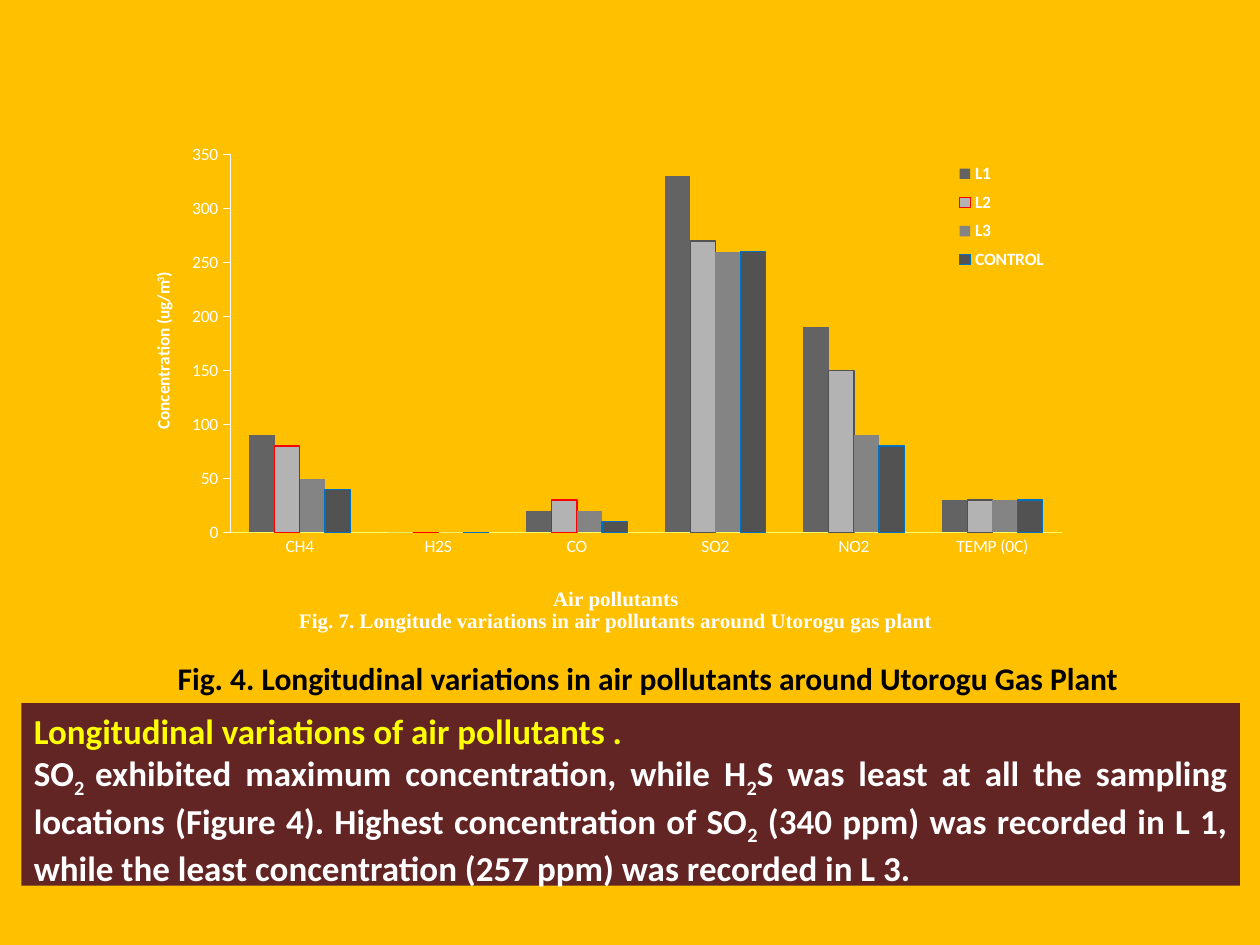
from lxml import etree
from pptx import Presentation
from pptx.chart.data import CategoryChartData
from pptx.dml.color import RGBColor
from pptx.enum.chart import XL_CHART_TYPE, XL_LEGEND_POSITION, XL_TICK_MARK
from pptx.enum.shapes import MSO_SHAPE
from pptx.enum.text import MSO_ANCHOR, PP_ALIGN
from pptx.oxml.ns import qn
from pptx.util import Inches, Pt

AMBER = RGBColor(0xFF, 0xC0, 0x00)
MAROON = RGBColor(0x63, 0x25, 0x23)
YELLOW = RGBColor(0xFF, 0xFF, 0x00)
PALE_YELLOW = RGBColor(0xFF, 0xFF, 0x66)
WHITE = RGBColor(0xFF, 0xFF, 0xFF)
BLACK = RGBColor(0x00, 0x00, 0x00)
RED = RGBColor(0xFF, 0x00, 0x00)
BLUE = RGBColor(0x00, 0x70, 0xC0)
GREY_1 = RGBColor(0x63, 0x63, 0x63)
GREY_2 = RGBColor(0xB3, 0xB3, 0xB3)
GREY_3 = RGBColor(0x84, 0x84, 0x84)
GREY_4 = RGBColor(0x52, 0x52, 0x52)

CLUSTERED = XL_CHART_TYPE.COLUMN_CLUSTERED
LEGEND_RIGHT = XL_LEGEND_POSITION.RIGHT
TICK_NONE, TICK_OUT = XL_TICK_MARK.NONE, XL_TICK_MARK.OUTSIDE
RECTANGLE = MSO_SHAPE.RECTANGLE
TOP = MSO_ANCHOR.TOP
LEFT, JUSTIFY = PP_ALIGN.LEFT, PP_ALIGN.JUSTIFY


def add_run(p, text, size, color, font="Calibri", baseline=0):
    """Add a bold run; baseline is the shift in percent."""
    r = p.add_run()
    r.text = text
    r.font.size = Pt(size)
    r.font.bold = True
    r.font.name = font
    r.font.color.rgb = color
    if baseline:
        r.font._element.set("baseline", str(baseline * 1000))


def set_layout(element, index, **values):
    """Place a chart part by fractions of the chart."""
    for old in element.findall(qn("c:layout")):
        element.remove(old)
    layout = etree.Element(qn("c:layout"))
    manual = etree.SubElement(layout, qn("c:manualLayout"))
    for name, value in values.items():
        etree.SubElement(manual, qn("c:" + name)).set("val", str(value))
    element.insert(index, layout)


prs = Presentation()
prs.slide_width, prs.slide_height = Inches(10), Inches(7.5)
s = prs.slides.add_slide(prs.slide_layouts[6])
s.background.fill.solid()
s.background.fill.fore_color.rgb = AMBER

# Findings panel
sp = s.shapes.add_shape(RECTANGLE, Inches(0.17), Inches(5.58), Inches(9.67), Inches(1.45))
sp.shadow.inherit = False
sp.fill.solid()
sp.fill.fore_color.rgb = MAROON
sp.line.fill.background()
tf = sp.text_frame
tf.word_wrap = True
tf.vertical_anchor = TOP
p = tf.paragraphs[0]
p.alignment = LEFT
add_run(p, "Longitudinal variations of air pollutants .", 20, YELLOW)
p = tf.add_paragraph()
p.alignment = JUSTIFY
for text, baseline in [
    ("SO", 0), ("2 ", -25),
    ("exhibited maximum concentration, while H", 0), ("2", -25),
    ("S was least at all the sampling locations (Figure 4). Highest concentration of SO", 0),
    ("2", -25),
    (" (340 ppm) was recorded in L 1, while the least concentration (257 ppm) was recorded in L 3.", 0),
]:
    add_run(p, text, 20, WHITE, baseline=baseline)

# Figure caption
caption = s.shapes.add_textbox(Inches(0.58), Inches(5.18), Inches(8.79), Inches(0.4))
tf = caption.text_frame
tf.word_wrap = True
tf.margin_left = Inches(0.83)
add_run(tf.paragraphs[0],
        "Fig. 4. Longitudinal variations in air pollutants around Utorogu Gas Plant", 18, BLACK)

# Pollutant chart
series_specs = [
    ("L1", (90, 0, 20, 330, 190, 30), GREY_1, None),
    ("L2", (80, 0, 30, 270, 150, 30), GREY_2, RED),
    ("L3", (50, 0, 20, 260, 90, 30), GREY_3, None),
    ("CONTROL", (40, 0, 10, 260, 80, 30), GREY_4, BLUE),
]
data = CategoryChartData()
data.categories = ["CH4", "H2S", "CO", "SO2", "NO2", "TEMP (0C)"]
for name, values, _, _ in series_specs:
    data.add_series(name, values)
chart = s.shapes.add_chart(CLUSTERED, Inches(1.17), Inches(1.07), Inches(7.33), Inches(4), data).chart
chart.has_title = False
chart.font.size = Pt(10)
chart.font.name = "Calibri"
chart.font.color.rgb = WHITE

plot = chart.plots[0]
plot.gap_width = 150
plot.overlap = 0
plot.vary_by_categories = False
for series, (_, _, fill, outline) in zip(plot.series, series_specs):
    series.invert_if_negative = False
    series.format.fill.solid()
    series.format.fill.fore_color.rgb = fill
    if outline is None:
        series.format.line.fill.background()
    else:
        series.format.line.color.rgb = outline
        series.format.line.width = Pt(0.75)
# The last three L2 columns have a dark outline
for i in range(3, 6):
    point = plot.series[1].points[i].format
    point.fill.solid()
    point.fill.fore_color.rgb = GREY_2
    point.line.color.rgb = GREY_4
    point.line.width = Pt(0.75)

category_axis, value_axis = chart.category_axis, chart.value_axis
value_axis.minimum_scale, value_axis.maximum_scale = 0, 350
value_axis.major_unit = 50
value_axis.has_major_gridlines = False
for axis, tick, color in [(category_axis, TICK_NONE, PALE_YELLOW), (value_axis, TICK_OUT, WHITE)]:
    axis.major_tick_mark = tick
    axis.minor_tick_mark = TICK_NONE
    axis.format.line.color.rgb = color
    axis.format.line.width = Pt(0.75)

category_title = category_axis.axis_title
tf = category_title.text_frame
add_run(tf.paragraphs[0], "Air pollutants", 12, WHITE, "Times New Roman")
add_run(tf.add_paragraph(),
        "Fig. 7. Longitude variations in air pollutants around Utorogu gas plant",
        12, WHITE, "Times New Roman")
set_layout(category_title._element, 1, xMode="edge", yMode="edge", x=0.16, y=0.9)
p = value_axis.axis_title.text_frame.paragraphs[0]
add_run(p, "Concentration (ug/m", 10, WHITE)
add_run(p, "3", 10, WHITE, baseline=30)
add_run(p, ")", 10, WHITE)

chart.has_legend = True
legend = chart.legend
legend.position = LEGEND_RIGHT
legend.include_in_layout = False
legend.font.bold = True
legend.font.size = Pt(10)
legend.font.color.rgb = WHITE
set_layout(legend._element, 1, xMode="edge", yMode="edge", x=0.87, y=0.04, w=0.11, h=0.25)
set_layout(chart._chartSpace.chart.plotArea, 0, layoutTarget="inner",
           xMode="edge", yMode="edge", x=0.09, y=0.04, w=0.9, h=0.76)

prs.save("out.pptx")
